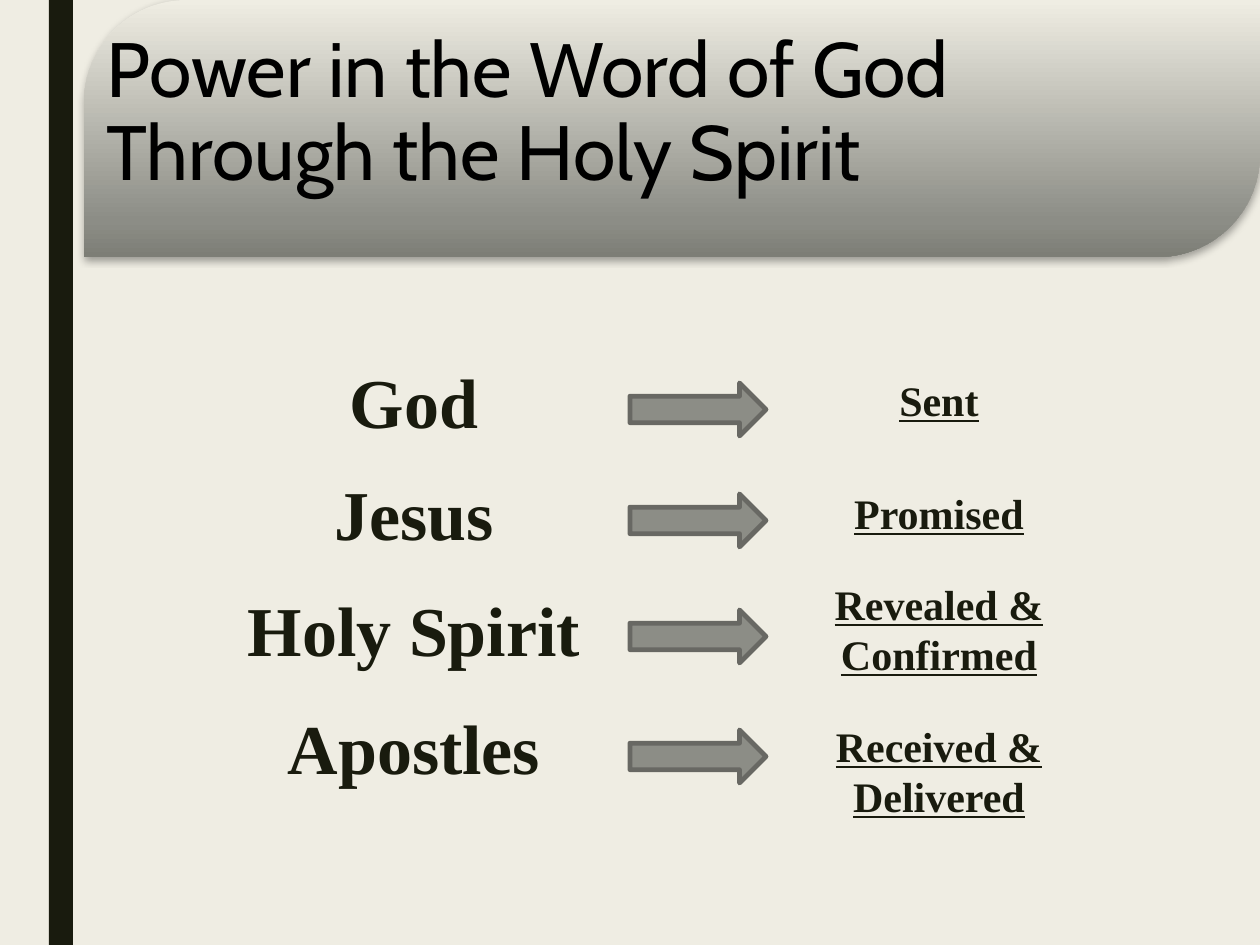
from lxml import etree
from pptx import Presentation
from pptx.dml.color import RGBColor
from pptx.enum.shapes import MSO_SHAPE
from pptx.enum.text import MSO_ANCHOR, PP_ALIGN
from pptx.oxml import parse_xml
from pptx.oxml.ns import nsdecls
from pptx.util import Pt

PX = 914400 // 126  # one px in EMU
WIDTH, HEIGHT = 1260, 945
COLORS = {
    "paper": "EFEDE3", "ink": "191B0E", "title": "000000", "shadow": "000000",
    "stone": "8C8D86", "stone_dark": "7D7E76", "arrow_edge": "686863",
}
SERIF, SANS = "Times New Roman", "Cabin"

# name, deed, then the tops of name, arrow and deed, and the deed's height
ROWS = [
    ("God", "Sent", 352, 383, 368, 63),
    ("Jesus", "Promised", 464, 494, 481, 63),
    ("Holy Spirit", "Revealed & Confirmed", 580, 610, 572, 115),
    ("Apostles", "Received & Delivered", 698, 730, 714, 115),
]


def color(name):
    return RGBColor.from_string(COLORS[name])


def emu(*lengths):
    return [length * PX for length in lengths]


def add_block(slide, preset, box, fill):
    block = slide.shapes.add_shape(preset, *emu(*box))
    block.shadow.inherit = False
    block.fill.solid()
    block.fill.fore_color.rgb = color(fill)
    block.line.fill.background()
    return block


def add_label(slide, box, text, size, font, ink="ink", bold=False,
              underline=False, align=PP_ALIGN.LEFT, spacing=None):
    label = slide.shapes.add_textbox(*emu(*box))
    frame = label.text_frame
    frame.word_wrap = True
    frame.vertical_anchor = MSO_ANCHOR.TOP
    paragraph = frame.paragraphs[0]
    paragraph.text = text
    paragraph.alignment = align
    paragraph.line_spacing = spacing
    for run in paragraph.runs:
        run.font.size = Pt(size)
        run.font.name = font
        run.font.bold = bold
        run.font.underline = underline
        run.font.color.rgb = color(ink)


def style_banner(banner):
    """Give the banner its downward gradient and soft shadow."""
    stops = [(0, "paper"), (86, "stone"), (100, "stone_dark")]
    stop_xml = "".join(
        f'<a:gs pos="{pos * 1000}"><a:srgbClr val="{COLORS[name]}"/></a:gs>'
        for pos, name in stops)
    gradient = parse_xml(
        f'<a:gradFill {nsdecls("a")} rotWithShape="1"><a:gsLst>{stop_xml}</a:gsLst>'
        '<a:lin ang="5400000" scaled="0"/></a:gradFill>')
    properties = banner._element.spPr
    solid = properties.find("{*}solidFill")
    properties.replace(solid, gradient)

    effects = properties.find("{*}effectLst")
    effects.append(etree.fromstring(
        f'<a:outerShdw {nsdecls("a")} blurRad="{Pt(4.5)}" dist="{Pt(1.5)}" '
        f'dir="5400000" rotWithShape="0"><a:srgbClr val="{COLORS["shadow"]}">'
        '<a:alpha val="35000"/></a:srgbClr></a:outerShdw>'))


def add_header(slide, left, top, width, height):
    banner = add_block(slide, MSO_SHAPE.ROUND_2_DIAG_RECTANGLE,
                       (left, top, width, height), "stone")
    banner.adjustments[0] = 0.4
    banner.adjustments[1] = 0
    style_banner(banner)
    add_label(slide, (left + 10, top + 26, 1234, 204),
              "Power in the Word of God\vThrough the Holy Spirit",
              44, SANS, ink="title", spacing=0.89)


def add_side_bar(slide, left, top, width, height):
    add_block(slide, MSO_SHAPE.RECTANGLE, (left, top, width, height), "ink")


def add_row(slide, left, name, deed, name_top, arrow_top, deed_top, deed_height):
    """Place a name, an arrow and the deed it leads to."""
    add_label(slide, (left, name_top, 388, 97), name, 40, SERIF,
              bold=True, align=PP_ALIGN.CENTER)
    add_label(slide, (left + 577, deed_top, 284, deed_height), deed, 24, SERIF,
              bold=True, underline=True, align=PP_ALIGN.CENTER)
    arrow = add_block(slide, MSO_SHAPE.RIGHT_ARROW,
                      (left + 410, arrow_top, 136, 53), "stone")
    arrow.line.color.rgb = color("arrow_edge")
    arrow.line.width = Pt(2.75)


def main():
    deck = Presentation()
    deck.slide_width, deck.slide_height = emu(WIDTH, HEIGHT)
    slide = deck.slides.add_slide(deck.slide_layouts[6])
    slide.background.fill.solid()
    slide.background.fill.fore_color.rgb = color("paper")

    add_header(slide, 84, 0, WIDTH - 84, 257)
    add_side_bar(slide, 49, 0, 24, HEIGHT)
    for row in ROWS:
        add_row(slide, 220, *row)

    deck.save("out.pptx")


if __name__ == "__main__":
    main()
